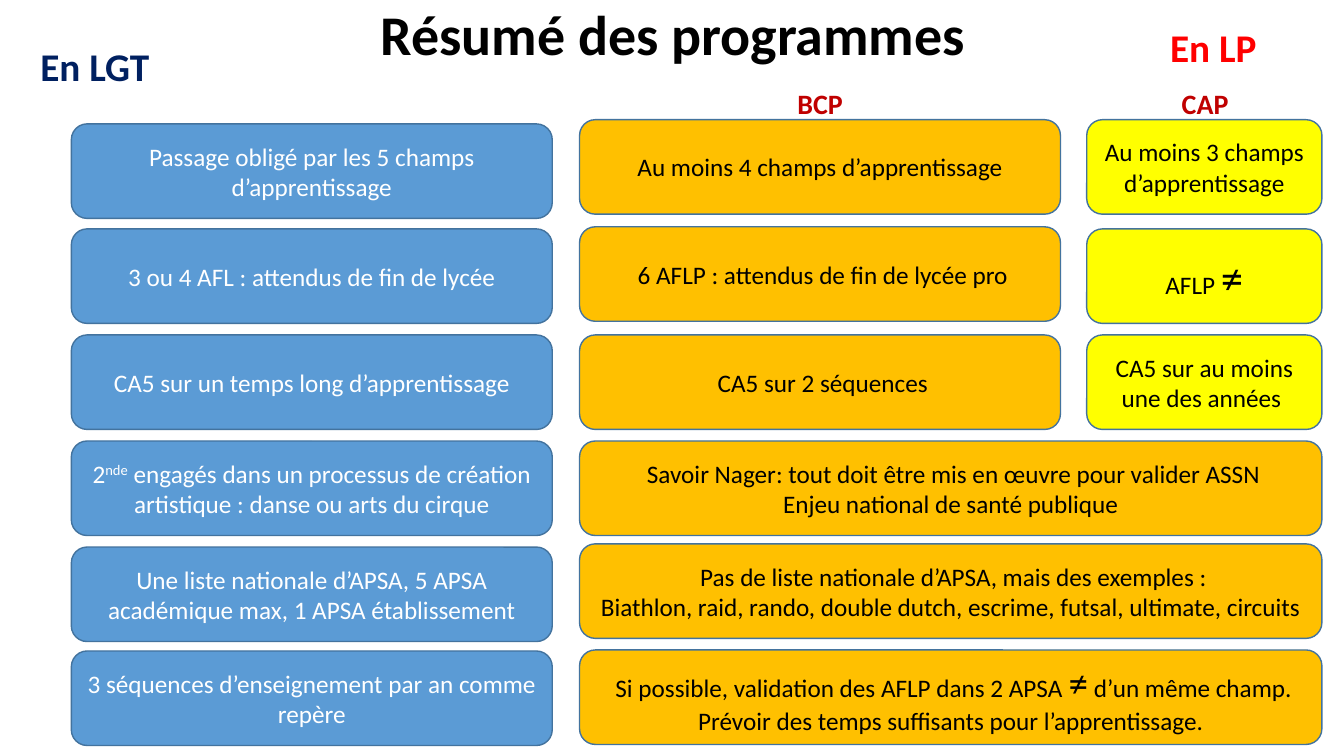
from dataclasses import dataclass

from pptx import Presentation
from pptx import util as u
from pptx.dml.color import RGBColor
from pptx.enum import shapes, text

PX = 9525  # EMU per px, 96 px to the inch


@dataclass(frozen=True)
class Theme:
    font: str = "Calibri"
    black: str = "000000"
    white: str = "FFFFFF"
    navy: str = "002060"
    red: str = "FF0000"
    dark_red: str = "C00000"
    blue: str = "5B9BD5"
    orange: str = "FFC000"
    yellow: str = "FFFF00"
    outline: str = "43739E"
    title: int = 40
    track: int = 28
    diploma: int = 20
    body: int = 18
    sign_small: int = 28
    sign_large: int = 32


theme = Theme()


def px(*lengths):
    return [u.Emu(length * PX) for length in lengths]


def write(para, spans, size, colour, bold=False):
    """Fill a paragraph with spans: plain strings, or (string, size) pairs
    where the size "super" raises the string."""
    para.font.name = theme.font
    para.font.size = u.Pt(size)
    para.font.bold = bold
    para.font.color.rgb = RGBColor.from_string(colour)
    for item in spans:
        words, style = (item, None) if isinstance(item, str) else item
        span = para.add_run()
        span.text = words
        if style == "super":
            span.font._element.set("baseline", "30000")
        elif style:
            span.font.size = u.Pt(style)


deck = Presentation()
deck.slide_width, deck.slide_height = px(1280, 720)
page = deck.slides.add_slide(deck.slide_layouts[6])

# Title
title = page.shapes.add_textbox(*px(74, -8, 1134, 87)).text_frame
title.word_wrap = True
title.vertical_anchor = text.MSO_ANCHOR.MIDDLE
heading = title.paragraphs[0]
heading.alignment = text.PP_ALIGN.CENTER
heading.line_spacing = 0.9
write(heading, ["Résumé des programmes"], theme.title, theme.black, True)

# Column labels
labels = [
    ("En LGT", (29, 36, 125, 55), theme.track, theme.navy),
    ("En LP", (1105, 17, 103, 55), theme.track, theme.red),
    ("BCP", (750, 78, 63, 42), theme.diploma, theme.dark_red),
    ("CAP", (1116, 78, 64, 42), theme.diploma, theme.dark_red),
]
for words, place, size, colour in labels:
    label = page.shapes.add_textbox(*px(*place)).text_frame
    label.word_wrap = False
    label.auto_size = text.MSO_AUTO_SIZE.SHAPE_TO_FIT_TEXT
    write(label.paragraphs[0], [words], size, colour, True)

# Columns of cards: left, width, fill, text colour, then (top, paragraphs)
card_height = 90
columns = [
    (68, 458, theme.blue, theme.white, [
        (118, [["Passage obligé par les 5 champs d’apprentissage"]]),
        (218, [["3 ou 4 AFL : attendus de fin de lycée"]]),
        (319, [["CA5 sur un temps long d’apprentissage"]]),
        (420, [["2", ("nde", "super"), " engagés dans un processus de création "
                "artistique : danse ou arts du cirque"]]),
        (521, [["Une liste nationale d’APSA, 5 APSA académique max, "
                "1 APSA établissement"]]),
        (620, [["3 séquences d’enseignement par an comme repère"]]),
    ]),
    (552, 458, theme.orange, theme.black, [
        (114, [["Au moins 4 champs d’apprentissage"]]),
        (216, [[" 6 AFLP : attendus de fin de lycée pro"]]),
        (319, [[" CA5 sur 2 séquences"]]),
    ]),
    (1035, 224, theme.yellow, theme.black, [
        (114, [["Au moins 3 champs d’apprentissage"]]),
        (218, [["AFLP ", ("≠", theme.sign_large)]]),
        (319, [["CA5 sur au moins une des années "]]),
    ]),
    (552, 707, theme.orange, theme.black, [
        (420, [[" Savoir Nager: tout doit être mis en œuvre pour valider ASSN"],
               ["Enjeu national de santé publique"]]),
        (518, [[" Pas de liste nationale d’APSA, mais des exemples :"],
               ["Biathlon, raid, rando, double dutch, escrime, futsal, "
                "ultimate, circuits"]]),
        (619, [[" Si possible, validation des AFLP dans 2 APSA ",
                ("≠", theme.sign_small),
                " d’un même champ. Prévoir des temps suffisants pour "
                "l’apprentissage."]]),
    ]),
]
for left, width, fill, ink, cards in columns:
    for top, paragraphs in cards:
        card = page.shapes.add_shape(
            shapes.MSO_SHAPE.ROUNDED_RECTANGLE,
            *px(left, top, width, card_height))
        card.shadow.inherit = False
        card.fill.solid()
        card.fill.fore_color.rgb = RGBColor.from_string(fill)
        card.line.color.rgb = RGBColor.from_string(theme.outline)
        card.line.width = u.Pt(1)
        frame = card.text_frame
        frame.word_wrap = True
        frame.vertical_anchor = text.MSO_ANCHOR.MIDDLE
        for index, spans in enumerate(paragraphs):
            para = frame.add_paragraph() if index else frame.paragraphs[0]
            para.alignment = text.PP_ALIGN.CENTER
            write(para, spans, theme.body, ink)

deck.save("out.pptx")
